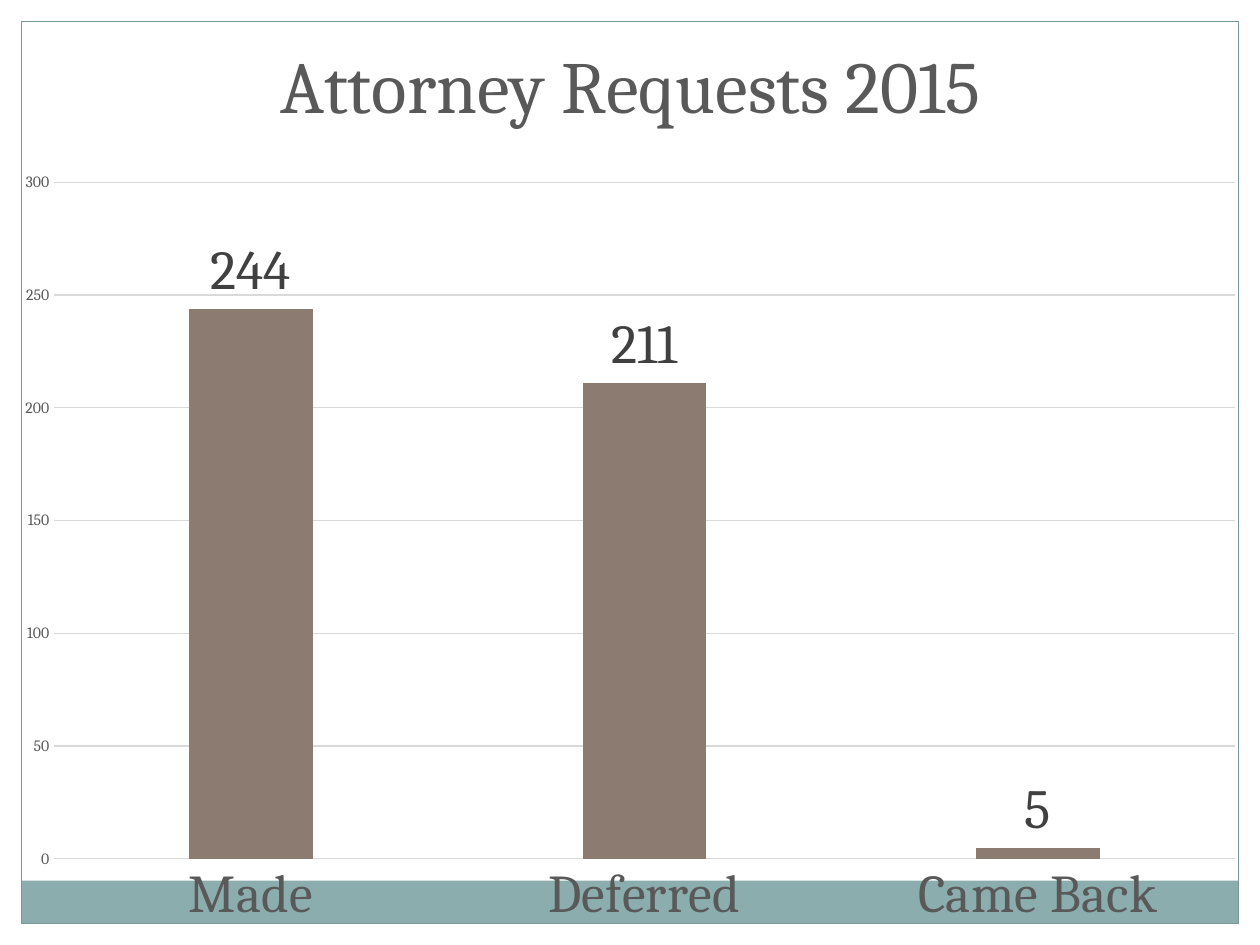
from lxml.etree import SubElement
from pptx import Presentation
from pptx.chart.data import CategoryChartData
from pptx.dml.color import RGBColor
from pptx.enum.chart import XL_CHART_TYPE, XL_LABEL_POSITION, XL_TICK_MARK
from pptx.enum.shapes import MSO_SHAPE
from pptx.oxml.ns import qn
from pptx.util import Inches, Pt

# Content
TITLE = "Attorney Requests 2015"
DATA = {"Made": 244, "Deferred": 211, "Came Back": 5}
FONT = "Cambria"
COLORS = {"white": "FFFFFF", "band": "8CADAE", "frame": "7C999A", "bar": "8C7B70",
          "text": "595959", "label": "404040", "grid": "D9D9D9"}
WIDE, HIGH, EDGE, FOOT = 10, 7.5, 0.17, 0.34
# Plot area as shares of the chart
PLOT = {"x": 0.043, "y": 0.193, "w": 0.937, "h": 0.716}

# Left, top, width, height, fill, line
PANELS = [
    (0, 0, WIDE, EDGE, "white", None),
    (WIDE - EDGE, 0, EDGE, HIGH, "white", None),
    (0, 0, EDGE, HIGH, "white", None),
    (EDGE, HIGH - EDGE - FOOT, WIDE - 2 * EDGE, FOOT, "band", None),
    (EDGE, EDGE, WIDE - 2 * EDGE, HIGH - 2 * EDGE, None, "frame"),
]


def color(name):
    return RGBColor.from_string(COLORS[name])


def style(font, size, name):
    font.name, font.size, font.bold = FONT, Pt(size), False
    font.color.rgb = color(name)


def stroke(line, name):
    line.color.rgb = color(name)
    line.width = Pt(0.75)


def add_panel(slide, left, top, width, height, fill, line):
    box = [Inches(n) for n in (left, top, width, height)]
    panel = slide.shapes.add_shape(MSO_SHAPE.RECTANGLE, *box)
    panel.shadow.inherit = False
    if fill:
        panel.fill.solid()
        panel.fill.fore_color.rgb = color(fill)
    else:
        panel.fill.background()
    if line:
        stroke(panel.line, line)
    else:
        panel.line.fill.background()


def place_plot(chart):
    area = chart._chartSpace.chart.plotArea
    for old in area.findall(qn("c:layout")):
        area.remove(old)
    layout = SubElement(area, qn("c:layout"))
    area.insert(0, layout)
    manual = SubElement(layout, qn("c:manualLayout"))
    rules = {"layoutTarget": "inner", "xMode": "edge", "yMode": "edge", **PLOT}
    for tag, value in rules.items():
        SubElement(manual, qn(f"c:{tag}")).set("val", str(value))


def add_bars(slide):
    data = CategoryChartData()
    data.categories = list(DATA)
    data.add_series("Series 1", list(DATA.values()))
    frame = slide.shapes.add_chart(XL_CHART_TYPE.COLUMN_CLUSTERED, 0, 0,
                                   Inches(WIDE), Inches(HIGH), data)
    chart = frame.chart
    chart.font.name, chart.font.size = FONT, Pt(10)
    chart.has_legend = False

    # Title
    chart.has_title = True
    chart.chart_title.include_in_layout = False
    head = chart.chart_title.text_frame
    head.text = TITLE
    style(head.paragraphs[0].font, 42, "text")

    # Axes
    cats, vals = chart.category_axis, chart.value_axis
    for axis, size in ((cats, 30.4), (vals, 9)):
        axis.major_tick_mark = axis.minor_tick_mark = XL_TICK_MARK.NONE
        style(axis.tick_labels.font, size, "text")
    stroke(cats.format.line, "grid")
    vals.format.line.fill.background()
    vals.minimum_scale, vals.maximum_scale, vals.major_unit = 0, 300, 50
    stroke(vals.major_gridlines.format.line, "grid")

    # Columns and their labels
    plot = chart.plots[0]
    plot.gap_width, plot.overlap = 219, -27
    plot.vary_by_categories = False
    bars = plot.series[0]
    bars.format.fill.solid()
    bars.format.fill.fore_color.rgb = color("bar")
    labels = bars.data_labels
    labels.show_value = True
    labels.position = XL_LABEL_POSITION.OUTSIDE_END
    style(labels.font, 31.5, "label")
    place_plot(chart)


def main():
    deck = Presentation()
    deck.slide_width, deck.slide_height = Inches(WIDE), Inches(HIGH)
    slide = deck.slides.add_slide(deck.slide_layouts[6])
    for panel in PANELS:
        add_panel(slide, *panel)
    add_bars(slide)
    deck.save("out.pptx")


if __name__ == "__main__":
    main()
